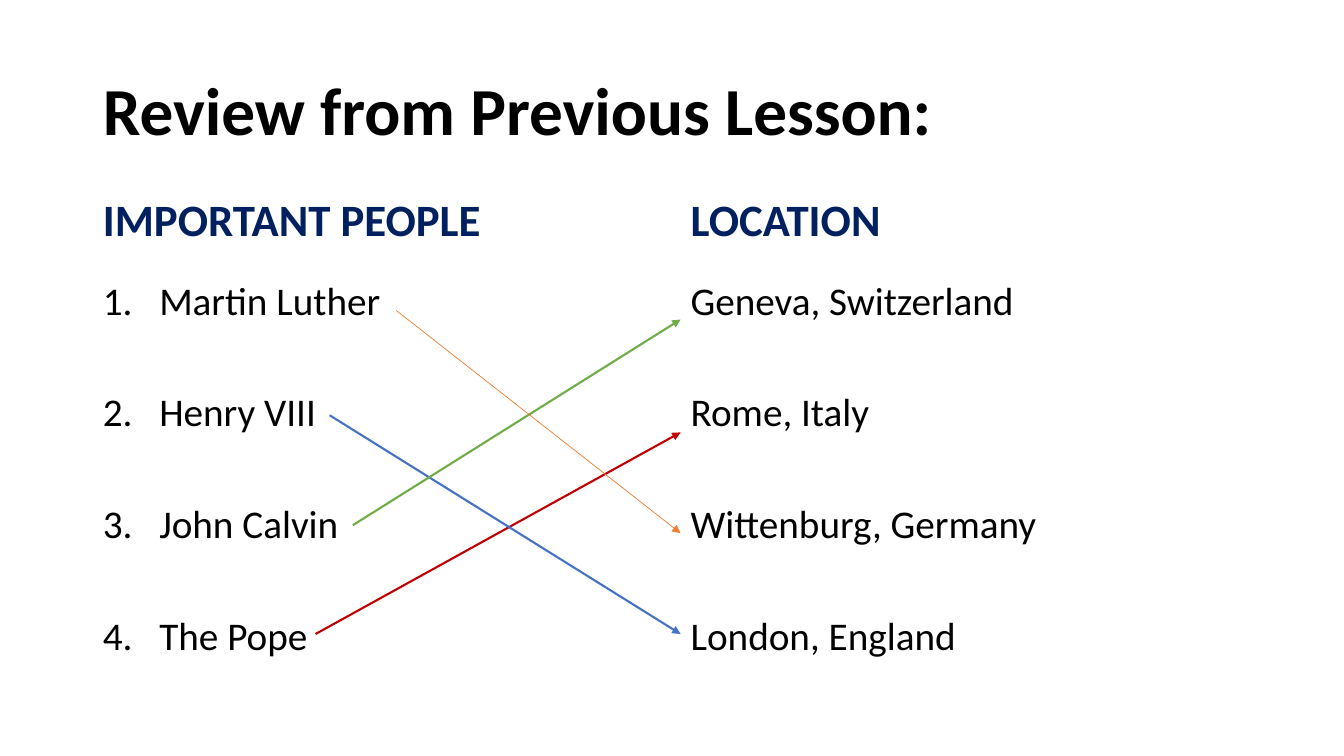
import dataclasses

import lxml.etree
import pptx
import pptx.dml.color
import pptx.enum.shapes
import pptx.enum.text
import pptx.oxml.ns
import pptx.shapes.placeholder
import pptx.slide
import pptx.util

Inches = pptx.util.Inches
Pt = pptx.util.Pt
RGBColor = pptx.dml.color.RGBColor
Anchor = pptx.enum.text.MSO_ANCHOR
qn = pptx.oxml.ns.qn

BLACK = RGBColor(0x00, 0x00, 0x00)
NAVY = RGBColor(0x00, 0x20, 0x60)
RED = RGBColor(0xC0, 0x00, 0x00)
BLUE = RGBColor(0x44, 0x72, 0xC4)
GREEN = RGBColor(0x70, 0xAD, 0x47)
ORANGE = RGBColor(0xED, 0x7D, 0x31)

FONT = "Calibri"
LEFT, RIGHT = 0.92, 6.75
INDENT = 0.56
FIRST_GAP, ROW_GAP = 10, 49.6


@dataclasses.dataclass(frozen=True)
class Block:
    idx: int
    box: tuple[float, float, float, float]
    lines: tuple[str, ...]
    size: int
    color: RGBColor = BLACK
    bold: bool = False
    anchor: Anchor = Anchor.TOP
    numbered: bool = False


@dataclasses.dataclass(frozen=True)
class Arrow:
    start: tuple[float, float]
    end_y: float
    color: RGBColor
    width: float = 1.5


BLOCKS = (
    Block(0, (LEFT, 0.4, 11.5, 1.45), ("Review from Previous Lesson:",),
          48, bold=True, anchor=Anchor.MIDDLE),
    Block(1, (LEFT, 1.59, 5.64, 0.9), ("IMPORTANT PEOPLE",),
          32, NAVY, True, Anchor.BOTTOM),
    Block(2, (LEFT, 2.74, 5.64, 4.03),
          ("Martin Luther", "Henry VIII", "John Calvin", "The Pope"),
          28, numbered=True),
    Block(3, (RIGHT, 1.59, 5.67, 0.9), ("LOCATION",),
          32, NAVY, True, Anchor.BOTTOM),
    Block(4, (RIGHT, 2.74, 5.67, 4.03),
          ("Geneva, Switzerland", "Rome, Italy",
           "Wittenburg, Germany", "London, England"), 28),
)

ARROWS = (
    Arrow((3.13, 6.29), 4.29, RED),
    Arrow((3.27, 4.12), 6.29, BLUE),
    Arrow((3.5, 5.21), 3.17, GREEN),
    Arrow((3.93, 3.08), 5.29, ORANGE, 0.5),
)


def set_mark(para, numbered: bool) -> None:
    """Number the paragraph, or clear its bullet and indent."""
    props = para._p.get_or_add_pPr()
    indent = Inches(INDENT) if numbered else 0
    props.set("marL", str(indent))
    props.set("indent", str(-indent))
    if numbered:
        lxml.etree.SubElement(props, qn("a:buFont"), typeface="+mj-lt")
        lxml.etree.SubElement(props, qn("a:buAutoNum"), type="arabicPeriod")
    else:
        lxml.etree.SubElement(props, qn("a:buNone"))


def fill_block(slide: pptx.slide.Slide, block: Block) -> None:
    holder = next(h for h in slide.placeholders
                  if h.placeholder_format.idx == block.idx)
    holder.left, holder.top, holder.width, holder.height = map(Inches, block.box)
    frame = holder.text_frame
    frame.word_wrap = True
    frame.auto_size = pptx.enum.text.MSO_AUTO_SIZE.NONE
    frame.vertical_anchor = block.anchor
    for row, line in enumerate(block.lines):
        para = frame.add_paragraph() if row else frame.paragraphs[0]
        para.alignment = pptx.enum.text.PP_ALIGN.LEFT
        para.line_spacing = 0.9
        if block.idx:
            para.space_before = Pt(ROW_GAP if row else FIRST_GAP)
        set_mark(para, block.numbered)
        run = para.add_run()
        run.text = line
        run.font.name = FONT
        run.font.size = Pt(block.size)
        run.font.bold = block.bold
        run.font.color.rgb = block.color


def draw_arrow(slide: pptx.slide.Slide, arrow: Arrow) -> None:
    ends = map(Inches, (*arrow.start, RIGHT, arrow.end_y))
    link = slide.shapes.add_connector(
        pptx.enum.shapes.MSO_CONNECTOR.STRAIGHT, *ends)
    link.line.color.rgb = arrow.color
    link.line.width = Pt(arrow.width)
    lxml.etree.SubElement(link.line._get_or_add_ln(), qn("a:tailEnd"),
                          type="triangle")
    lxml.etree.SubElement(link._element.spPr, qn("a:effectLst"))


def main() -> None:
    deck = pptx.Presentation()
    deck.slide_width, deck.slide_height = Inches(13.33), Inches(7.5)
    slide = deck.slides.add_slide(deck.slide_layouts.get_by_name("Comparison"))
    for block in BLOCKS:
        fill_block(slide, block)
    for arrow in ARROWS:
        draw_arrow(slide, arrow)
    deck.save("out.pptx")


if __name__ == "__main__":
    main()
